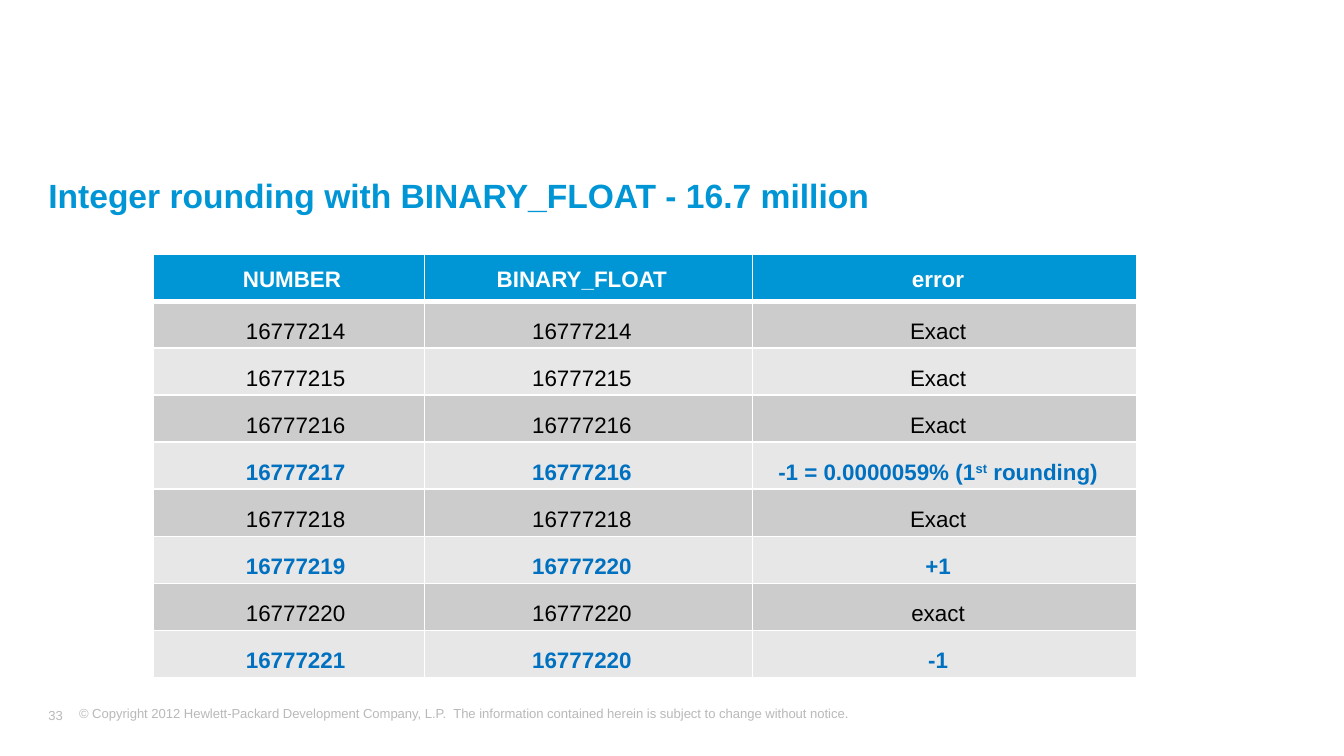
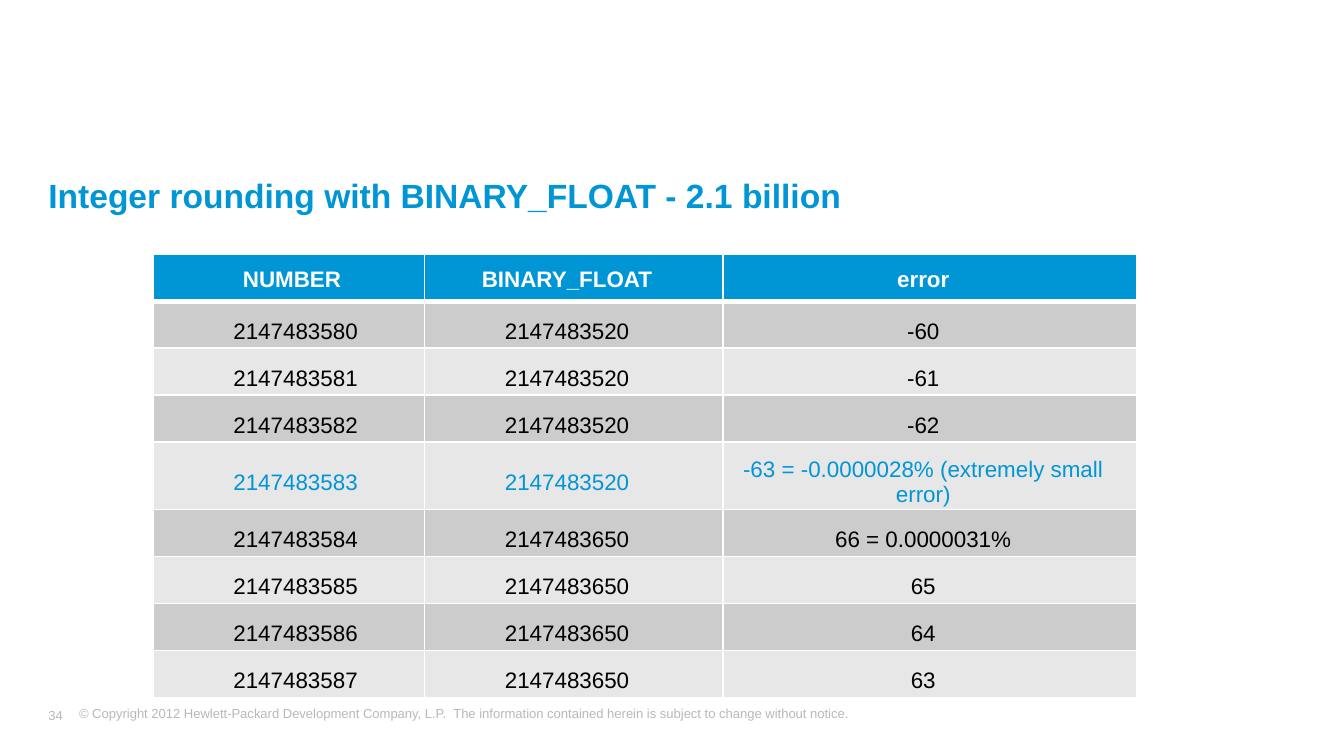
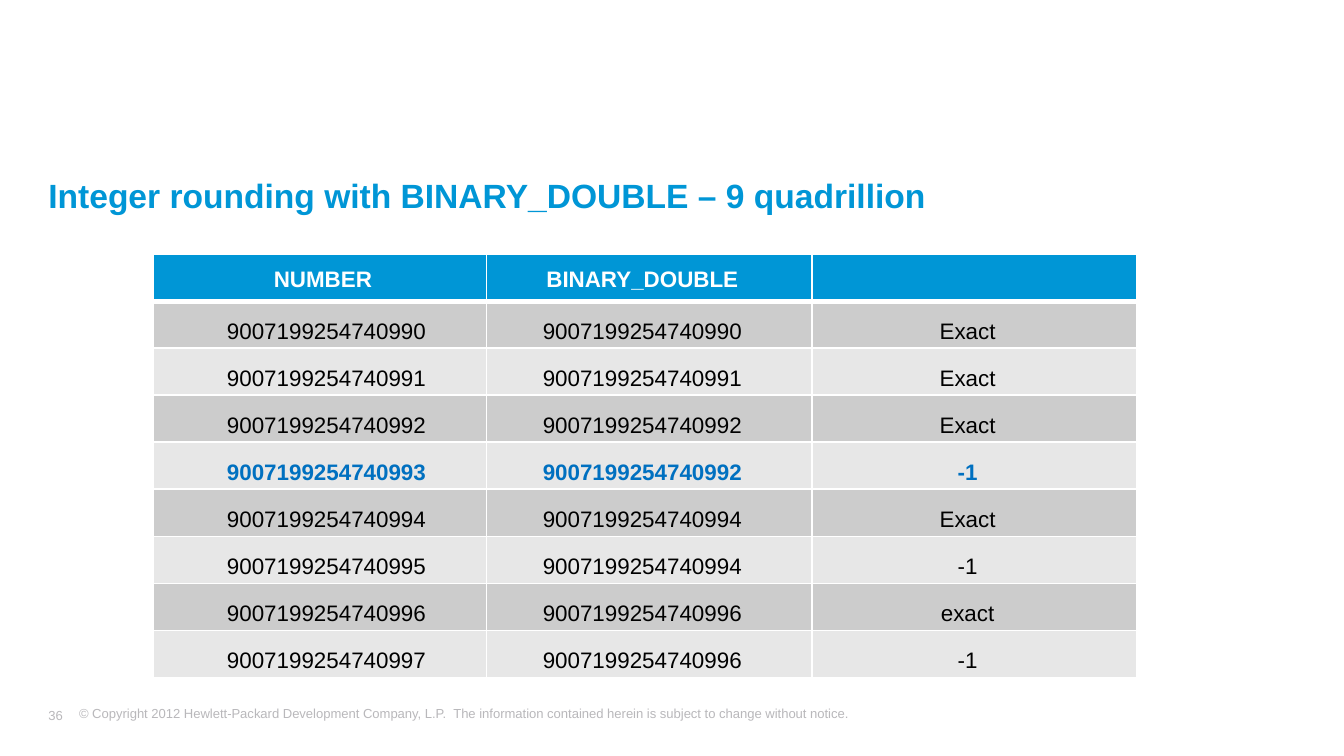
"""Build three slides on integer rounding with binary floating point types."""
from dataclasses import dataclass

from lxml.etree import SubElement
from pptx import Presentation
from pptx.dml.color import RGBColor
from pptx.enum.text import MSO_ANCHOR, MSO_AUTO_SIZE, PP_ALIGN
from pptx.oxml.ns import qn
from pptx.util import Emu, Pt

PX = 914400 // 200
FONT = "Arial"
BLUE = RGBColor(0x00, 0x96, 0xD6)
DEEP_BLUE = RGBColor(0x00, 0x70, 0xC0)
GREY = RGBColor(0xB9, 0xB8, 0xBB)
DARK_BAND = RGBColor(0xCC, 0xCC, 0xCC)
LIGHT_BAND = RGBColor(0xE7, 0xE7, 0xE7)
BLACK = RGBColor(0x00, 0x00, 0x00)
WHITE = RGBColor(0xFF, 0xFF, 0xFF)
COPYRIGHT = ("© Copyright 2012 Hewlett-Packard Development Company, L.P.  "
             "The information contained herein is subject to change without notice.")
TABLE_LEFT, TABLE_TOP = 228, 378
HEADER_HEIGHT, ROW_HEIGHT = 67, 70


@dataclass(frozen=True)
class RoundingSlide:
    """One slide: its number, title and table of rounded values."""
    number: int
    title: str
    widths: tuple[int, ...]
    header: tuple[str, ...]
    rows: tuple[tuple[str, ...], ...]
    marked: tuple[int, ...]
    mark_color: RGBColor = DEEP_BLUE
    mark_bold: bool = True


SLIDES = (
    RoundingSlide(
        33, "Integer rounding with BINARY_FLOAT - 16.7 million", (404, 488, 572),
        (" NUMBER", "BINARY_FLOAT", "error"),
        (("16777214", "16777214", "Exact"),
         ("16777215", "16777215", "Exact"),
         ("16777216", "16777216", "Exact"),
         ("16777217", "16777216", "-1 = 0.0000059% (1^st^ rounding)"),
         ("16777218", "16777218", "Exact"),
         ("16777219", "16777220", "+1"),
         ("16777220", "16777220", "exact"),
         ("16777221", "16777220", "-1")),
        marked=(4, 6, 8)),
    RoundingSlide(
        34, "Integer rounding with BINARY_FLOAT - 2.1 billion", (404, 444, 616),
        (" NUMBER", "BINARY_FLOAT", "error"),
        (("2147483580", "2147483520", "-60"),
         ("2147483581", "2147483520", "-61"),
         ("2147483582", "2147483520", "-62"),
         ("2147483583", "2147483520", "-63 = -0.0000028% (extremely small error)"),
         ("2147483584", "2147483650", "66 = 0.0000031%"),
         ("2147483585", "2147483650", "65"),
         ("2147483586", "2147483650", "64"),
         ("2147483587", "2147483650", "63")),
        marked=(4,), mark_color=BLUE, mark_bold=False),
    RoundingSlide(
        36, "Integer rounding with BINARY_DOUBLE – 9 quadrillion", (496, 484, 484),
        (" NUMBER", "BINARY_DOUBLE", ""),
        (("9007199254740990", "9007199254740990", "Exact"),
         ("9007199254740991", "9007199254740991", "Exact"),
         ("9007199254740992", "9007199254740992", "Exact"),
         ("9007199254740993", "9007199254740992", "-1"),
         ("9007199254740994", "9007199254740994", "Exact"),
         ("9007199254740995", "9007199254740994", "-1"),
         ("9007199254740996", "9007199254740996", "exact"),
         ("9007199254740997", "9007199254740996", "-1")),
        marked=(4,)),
)


def px(n: int) -> Emu:
    """Turn px into EMU."""
    return Emu(n * PX)


def set_margins(box, left: int, top: int, right: int, bottom: int) -> None:
    """Set the inner margins of a text frame or cell."""
    box.margin_left, box.margin_top = px(left), px(top)
    box.margin_right, box.margin_bottom = px(right), px(bottom)


def write(tf, text: str, *, size: int, color: RGBColor, bold: bool = False,
          align=PP_ALIGN.LEFT, after: int = 0) -> None:
    """Write one paragraph, raising the parts between carets."""
    p = tf.paragraphs[0]
    p.alignment, p.space_after = align, Pt(after)
    if not text:
        SubElement(p._p, qn("a:endParaRPr"), sz=str(size * 100))
        return
    for i, part in enumerate(text.split("^")):
        r = p.add_run()
        r.text = part
        r.font.name, r.font.size, r.font.bold = FONT, Pt(size), bold
        r.font.color.rgb = color
        if i % 2:
            r._r.get_or_add_rPr().set("baseline", "30000")


def set_borders(cell, top: int, bottom: int) -> None:
    """Draw white cell borders, with top and bottom widths in points."""
    tc_pr = cell._tc.get_or_add_tcPr()
    for side, width in (("L", 1), ("R", 1), ("T", top), ("B", bottom)):
        ln = SubElement(tc_pr, qn(f"a:ln{side}"), w=str(Pt(width)))
        SubElement(SubElement(ln, qn("a:solidFill")), qn("a:srgbClr"), val=str(WHITE))


def add_title(s, text: str) -> None:
    """Place and format the title."""
    sp = s.shapes.title
    sp.left, sp.top, sp.width, sp.height = px(72), px(260), px(1776), px(704)
    tf = sp.text_frame
    tf.auto_size, tf.vertical_anchor = MSO_AUTO_SIZE.NONE, MSO_ANCHOR.TOP
    set_margins(tf, 0, 0, 0, 0)
    write(tf, text, size=18, color=BLUE, bold=True, after=4)


def add_footer(s, number: int) -> None:
    """Add the copyright line and the slide number."""
    tf = s.shapes.add_textbox(px(98), px(1040), px(1752), px(50)).text_frame
    tf.word_wrap = True
    write(tf, COPYRIGHT, size=7, color=GREY)
    tf = s.shapes.add_textbox(px(72), px(1048), px(70), px(32)).text_frame
    tf.word_wrap, tf.vertical_anchor = False, MSO_ANCHOR.MIDDLE
    set_margins(tf, 0, 10, 20, 10)
    write(tf, str(number), size=7, color=GREY)


def add_table(s, data: RoundingSlide) -> None:
    """Add the banded table of numbers, stored values and errors."""
    rows = (data.header, *data.rows)
    height = HEADER_HEIGHT + ROW_HEIGHT * len(data.rows)
    table = s.shapes.add_table(len(rows), len(data.widths), px(TABLE_LEFT), px(TABLE_TOP),
                               px(sum(data.widths)), px(height)).table
    for column, width in zip(table.columns, data.widths):
        column.width = px(width)
    for i, texts in enumerate(rows):
        is_header, is_marked = i == 0, i in data.marked
        table.rows[i].height = px(HEADER_HEIGHT if is_header else ROW_HEIGHT)
        if is_header:
            fill, color, bold = BLUE, WHITE, True
        else:
            fill = DARK_BAND if i % 2 else LIGHT_BAND
            color = data.mark_color if is_marked else BLACK
            bold = is_marked and data.mark_bold
        for j, text in enumerate(texts):
            cell = table.cell(i, j)
            set_borders(cell, top=3 if i == 1 else 1, bottom=3 if is_header else 1)
            cell.fill.solid()
            cell.fill.fore_color.rgb = fill
            cell.vertical_anchor = MSO_ANCHOR.TOP if is_header else MSO_ANCHOR.MIDDLE
            first_right = 20 if is_header else 0
            set_margins(cell, 20, 20, 40 if j else first_right, 10 if is_header else 0)
            write(cell.text_frame, text, size=12, color=color, bold=bold,
                  align=PP_ALIGN.CENTER)


def main() -> None:
    """Build and save the presentation."""
    prs = Presentation()
    prs.slide_width, prs.slide_height = px(2000), px(1125)
    for data in SLIDES:
        s = prs.slides.add_slide(prs.slide_layouts[5])
        add_footer(s, data.number)
        add_title(s, data.title)
        add_table(s, data)
    prs.save("out.pptx")


if __name__ == "__main__":
    main()
